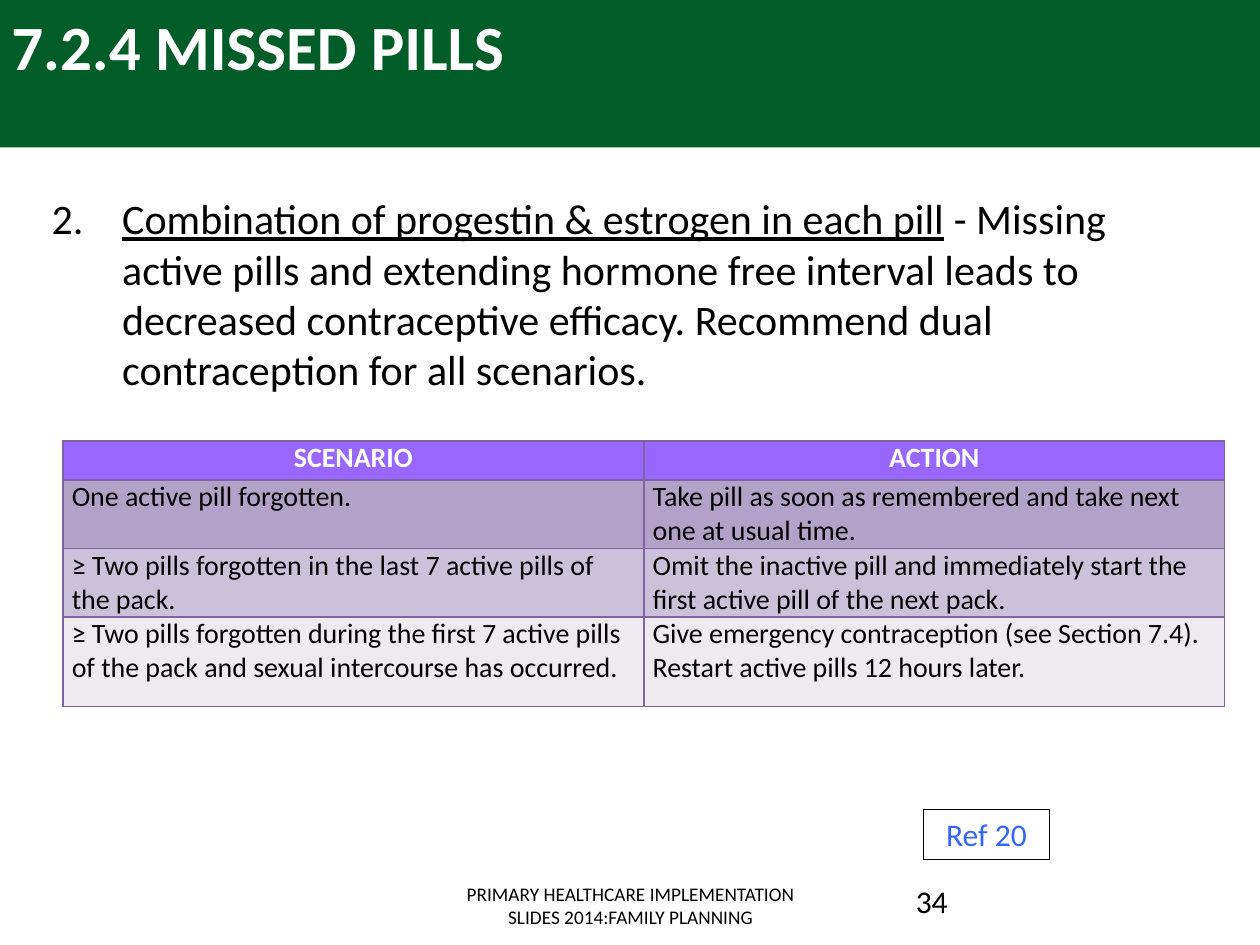
import pptx
import pptx.util
import pptx.dml.color
import pptx.enum.shapes
import pptx.enum.text
import pptx.oxml
import pptx.oxml.ns

Inches = pptx.util.Inches
Pt = pptx.util.Pt
ALIGN = pptx.enum.text.PP_ALIGN
NS = pptx.oxml.ns.nsdecls("a")


def color(code):
    """Turn a hex string into a colour."""
    return pptx.dml.color.RGBColor.from_string(code)


def paint(item, code):
    """Give an item a solid fill."""
    item.fill.solid()
    item.fill.fore_color.rgb = color(code)


def write(frame, text, size=18, ink="000000", bold=False, align=ALIGN.LEFT, lead=""):
    """Write lines of text, the first one opening with an underlined lead."""
    frame.word_wrap = True
    for row, line in enumerate(text.split("\n")):
        par = frame.paragraphs[0] if row == 0 else frame.add_paragraph()
        par.alignment = align
        parts = [(lead, True), (line, False)] if lead and row == 0 else [(line, False)]
        for words, under in parts:
            run = par.add_run()
            run.text = words
            font = run.font
            font.name, font.size, font.bold = "Calibri", Pt(size), bold
            font.underline = under
            font.color.rgb = color(ink)


def place(shape, box):
    """Move a shape to a box given in inches."""
    shape.left, shape.top, shape.width, shape.height = map(Inches, box)


def fit(shape, box):
    """Place a text holder, with text at the top and at its own size."""
    place(shape, box)
    frame = shape.text_frame
    frame.auto_size = pptx.enum.text.MSO_AUTO_SIZE.NONE
    frame.vertical_anchor = pptx.enum.text.MSO_ANCHOR.TOP
    return frame


def add_box(slide, box):
    """Add a plain rectangle without shadow."""
    rect = pptx.enum.shapes.MSO_SHAPE.RECTANGLE
    shape = slide.shapes.add_shape(rect, *map(Inches, box))
    shape.shadow.inherit = False
    return shape


def add_head(slide, box):
    """Build the green band and the title over it."""
    left, top, width, height = box
    band = add_box(slide, box)
    paint(band, "005D28")
    band.line.fill.background()
    tree = slide.shapes._spTree
    tree.remove(band._element)
    tree.insert(2, band._element)
    frame = fit(slide.shapes.title, (left - 0.01, top + 0.01, width - 1, height + 0.08))
    write(frame, "7.2.4 MISSED PILLS", size=36, ink="FFFFFF", bold=True)


def add_list(slide, box):
    """Fill the body with the numbered point."""
    frame = fit(slide.placeholders[1], box)
    write(
        frame,
        " - Missing active pills and extending hormone free interval leads to "
        "decreased contraceptive efficacy. Recommend dual contraception for all scenarios.",
        size=24,
        lead="Combination of progestin & estrogen in each pill",
    )
    par = frame.paragraphs[0]
    par.space_before = Pt(4.8)
    props = par._p.get_or_add_pPr()
    props.set("marL", str(Inches(0.56)))
    props.set("indent", str(Inches(-0.56)))
    props.append(pptx.oxml.parse_xml(f'<a:buFont {NS} typeface="+mj-lt"/>'))
    props.append(pptx.oxml.parse_xml(f'<a:buAutoNum {NS} type="arabicPeriod" startAt="2"/>'))


def edge(cell, code):
    """Draw a one point border round a cell."""
    props = cell._tc.get_or_add_tcPr()
    for spot, side in enumerate("LRTB"):
        props.insert(spot, pptx.oxml.parse_xml(
            f'<a:ln{side} {NS} w="{Pt(1)}"><a:solidFill>'
            f'<a:srgbClr val="{code}"/></a:solidFill></a:ln{side}>'))


def add_grid(slide, box):
    """Build the table of scenarios and actions."""
    rows = [
        (0.31, "9966FF", "SCENARIO", "ACTION"),
        (0.5, "B3A2C7", "One active pill forgotten.",
         "Take pill as soon as remembered and take next one at usual time."),
        (0.5, "CCC1DA", "≥ Two pills forgotten in the last 7 active pills of the pack.",
         "Omit the inactive pill and immediately start the first active pill of the next pack."),
        (0.71, "EDEAF0", "≥ Two pills forgotten during the first 7 active pills of the pack "
         "and sexual intercourse has occurred.",
         "Give emergency contraception (see Section 7.4).\nRestart active pills 12 hours later."),
    ]
    table = slide.shapes.add_table(len(rows), 2, *map(Inches, box)).table
    for row, (height, fill, *texts) in enumerate(rows):
        table.rows[row].height = Inches(height)
        look = dict(ink="FFFFFF", bold=True, align=ALIGN.CENTER) if row == 0 else {}
        for col, text in enumerate(texts):
            cell = table.cell(row, col)
            cell.margin_left = cell.margin_right = Inches(0.07)
            cell.margin_top = cell.margin_bottom = 0
            paint(cell, fill)
            edge(cell, "8064A2")
            write(cell.text_frame, text, size=16, **look)


def add_ref(slide, box):
    """Build the framed reference."""
    shape = add_box(slide, box)
    shape.fill.background()
    shape.line.color.rgb = color("000000")
    shape.line.width = Pt(0.25)
    write(shape.text_frame, "Ref 20", ink="3366FF", align=ALIGN.CENTER)


def add_foot(slide, box):
    """Build the footer line and the page number."""
    left, top, width, height = box
    notes = [
        (0, 3.17, "PRIMARY HEALTHCARE IMPLEMENTATION SLIDES 2014:FAMILY PLANNING",
         dict(size=11, align=ALIGN.CENTER)),
        (3.75, width - 3.75, "34", {}),
    ]
    for shift, wide, text, look in notes:
        spot = (left + shift, top, wide, height)
        shape = slide.shapes.add_textbox(*map(Inches, spot))
        write(fit(shape, spot), text, **look)


def main():
    """Build and save the slide."""
    deck = pptx.Presentation()
    deck.slide_width, deck.slide_height = Inches(10), Inches(7.5)
    slide = deck.slides.add_slide(deck.slide_layouts[1])
    add_head(slide, (0, 0, 10, 1.17))
    add_list(slide, (0.31, 1.48, 9.19, 5.22))
    add_foot(slide, (3.42, 6.95, 6.08, 0.4))
    add_grid(slide, (0.5, 3.5, 9.22, 2.02))
    add_ref(slide, (7.33, 6.42, 1, 0.4))
    deck.save("out.pptx")


if __name__ == "__main__":
    main()
